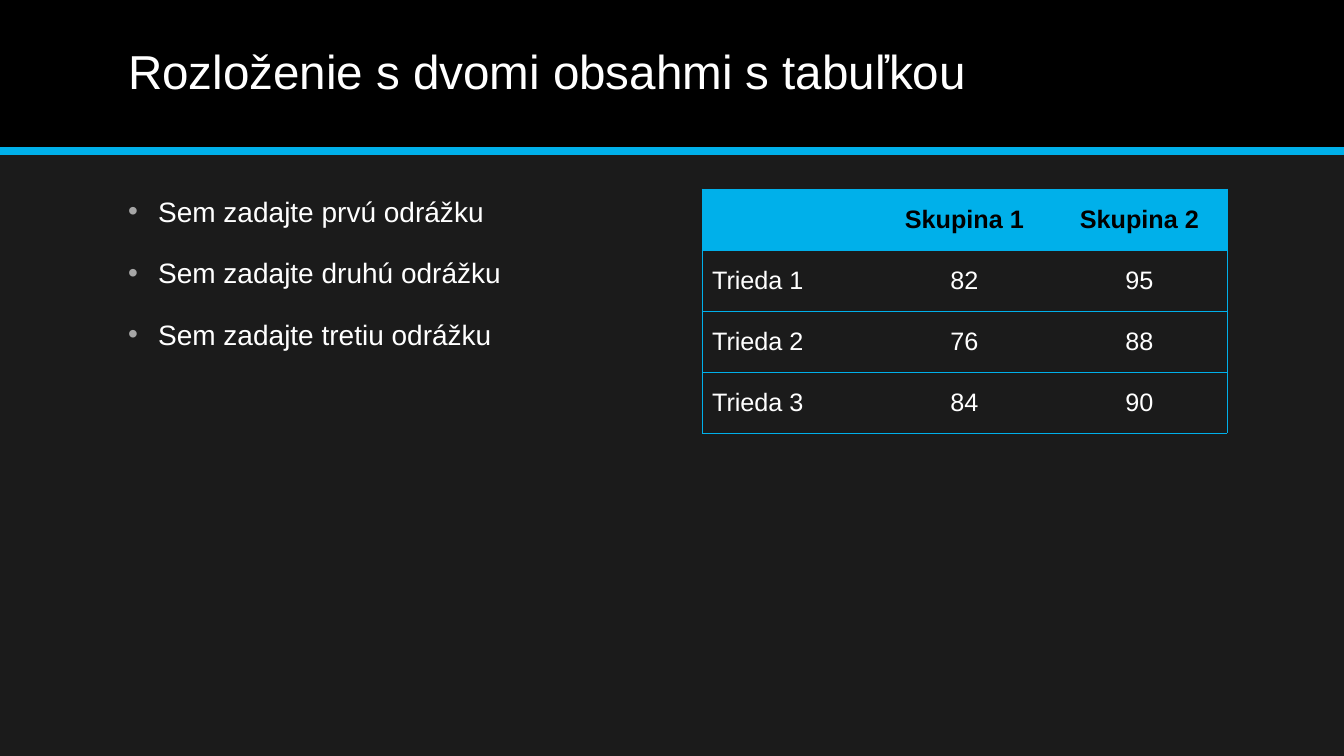
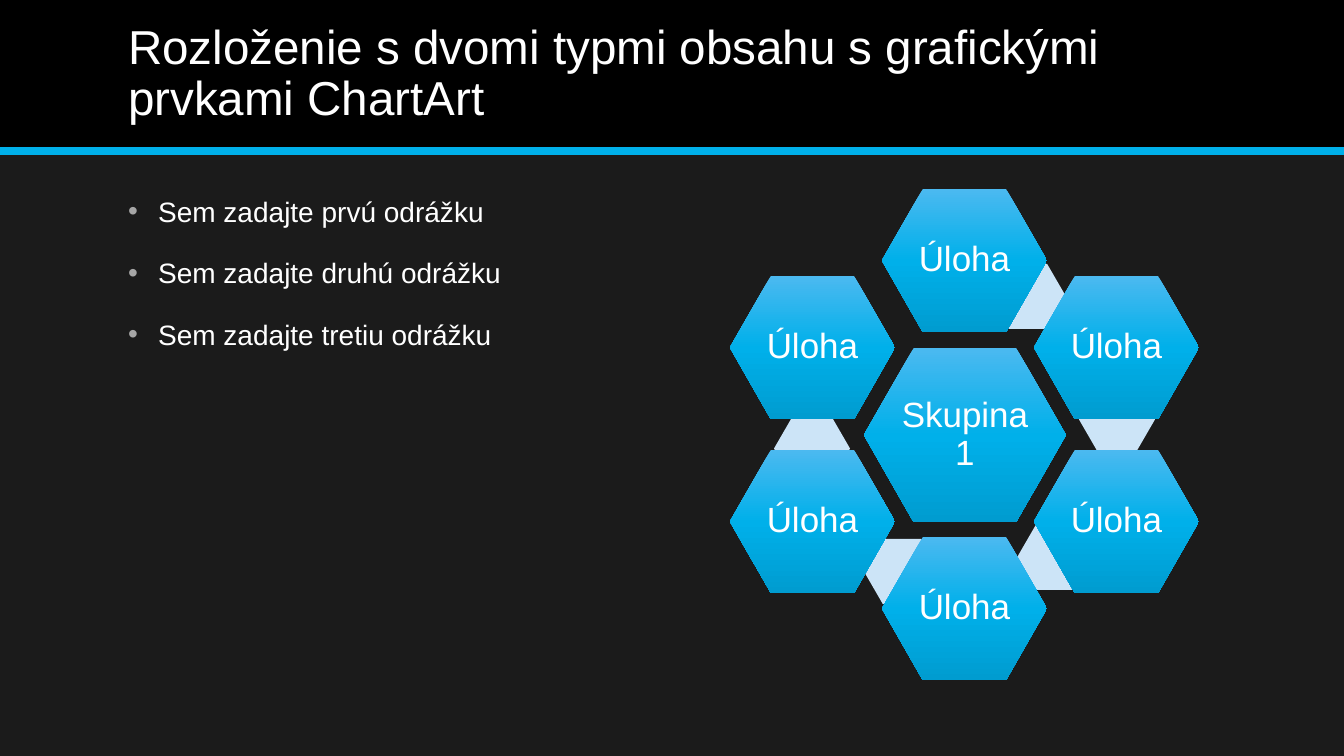
from lxml import etree
from pptx import Presentation
from pptx.dml.color import RGBColor
from pptx.enum.shapes import MSO_CONNECTOR, MSO_SHAPE
from pptx.enum.text import MSO_ANCHOR, MSO_AUTO_SIZE, PP_ALIGN
from pptx.oxml import parse_xml
from pptx.oxml.ns import nsdecls, qn
from pptx.util import Pt

RECTANGLE, HEXAGON = MSO_SHAPE.RECTANGLE, MSO_SHAPE.HEXAGON
STRAIGHT = MSO_CONNECTOR.STRAIGHT
MIDDLE, TOP = MSO_ANCHOR.MIDDLE, MSO_ANCHOR.TOP
LEFT, CENTER = PP_ALIGN.LEFT, PP_ALIGN.CENTER
NO_AUTOFIT = MSO_AUTO_SIZE.NONE

PX = 914400 / 100.8
WIDTH, HEIGHT, BAND_HEIGHT = 1344, 756, 151
FONT = "Arial"
BACKGROUND, BLACK, WHITE = "1B1B1B", "000000", "FFFFFF"
ACCENT, BULLET, PALE = "00B0EA", "A6A6A6", "CCE4F7"
GRADIENT = [(0, "4BB9F0"), (50000, ACCENT), (100000, "009CD0")]


def px(*lengths):
    return [round(length * PX) for length in lengths]


def add_run(paragraph, text, size, color=WHITE, bold=False):
    run = paragraph.add_run()
    run.text = text
    run.font.name = FONT
    run.font.size = Pt(size)
    run.font.bold = bold
    run.font.color.rgb = RGBColor.from_string(color)


presentation = Presentation()
presentation.slide_width, presentation.slide_height = px(WIDTH, HEIGHT)
layout = presentation.slide_layouts[1]

# Shared background and placeholder positions
background = presentation.slide_master.background.fill
background.solid()
background.fore_color.rgb = RGBColor.from_string(BACKGROUND)
PLACES = {0: (118, 14, 1109, 121), 1: (118, 189, 524, 492)}
for placeholder in layout.placeholders:
    index = placeholder.placeholder_format.idx
    if index in PLACES:
        (placeholder.left, placeholder.top,
         placeholder.width, placeholder.height) = px(*PLACES[index])

# Slides with title and bullets
TITLES = ["Rozloženie s dvomi obsahmi s tabuľkou",
          "Rozloženie s dvomi typmi obsahu s grafickými prvkami ChartArt"]
BULLETS = ["Sem zadajte prvú odrážku", "Sem zadajte druhú odrážku",
           "Sem zadajte tretiu odrážku"]
for title in TITLES:
    slide = presentation.slides.add_slide(layout)
    title_frame = slide.shapes.title.text_frame
    title_frame.auto_size = NO_AUTOFIT
    title_frame.vertical_anchor = MIDDLE
    paragraph = title_frame.paragraphs[0]
    paragraph.alignment = LEFT
    paragraph.line_spacing = 0.9
    add_run(paragraph, title, 34)

    body_frame = slide.placeholders[1].text_frame
    body_frame.auto_size = NO_AUTOFIT
    body_frame.vertical_anchor = TOP
    for number, text in enumerate(BULLETS):
        paragraph = body_frame.add_paragraph() if number else body_frame.paragraphs[0]
        paragraph.space_before = Pt(20)
        add_run(paragraph, text, 20)
        properties = paragraph._p.get_or_add_pPr()
        indent = px(30)[0]
        properties.set("marL", str(indent))
        properties.set("indent", str(-indent))
        bullet_color = etree.SubElement(properties, qn("a:buClr"))
        etree.SubElement(bullet_color, qn("a:srgbClr"), val=BULLET)
        etree.SubElement(properties, qn("a:buFont"), typeface=FONT)
        etree.SubElement(properties, qn("a:buChar"), char="•")

table_slide, diagram_slide = presentation.slides

# Header band and accent line, moved to the layout so every slide has them
band = table_slide.shapes.add_shape(RECTANGLE, *px(0, 0, WIDTH, BAND_HEIGHT))
band.shadow.inherit = False
band.fill.solid()
band.fill.fore_color.rgb = RGBColor.from_string(BLACK)
band.line.fill.background()
accent_line = table_slide.shapes.add_connector(
    STRAIGHT, *px(0, BAND_HEIGHT, WIDTH, BAND_HEIGHT))
accent_line.line.color.rgb = RGBColor.from_string(ACCENT)
accent_line.line.width = Pt(6)
etree.SubElement(accent_line._element.spPr, qn("a:effectLst"))
for position, shape in enumerate([band, accent_line], start=2):
    layout.shapes.element.insert(position, shape._element)

# Table with horizontal rules and an outer frame
ROWS = [["", "Skupina 1", "Skupina 2"],
        ["Trieda 1", "82", "95"],
        ["Trieda 2", "76", "88"],
        ["Trieda 3", "84", "90"]]
COLUMN_WIDTH, ROW_HEIGHT = 175, 61
row_count, column_count = len(ROWS), len(ROWS[0])
table = table_slide.shapes.add_table(
    row_count, column_count,
    *px(702, 189, column_count * COLUMN_WIDTH, row_count * ROW_HEIGHT)).table
table.horz_banding = False
for row_index, row in enumerate(ROWS):
    for column_index, text in enumerate(row):
        cell = table.cell(row_index, column_index)
        cell.vertical_anchor = MIDDLE
        is_header = row_index == 0
        if is_header:
            cell.fill.solid()
            cell.fill.fore_color.rgb = RGBColor.from_string(ACCENT)
        else:
            cell.fill.background()
        paragraph = cell.text_frame.paragraphs[0]
        paragraph.alignment = CENTER if column_index else LEFT
        if text:
            add_run(paragraph, text, 18, BLACK if is_header else WHITE, is_header)
        borders = {"L": column_index == 0, "R": column_index == column_count - 1,
                   "T": True, "B": True}
        for position, (side, visible) in enumerate(borders.items()):
            border = etree.Element(qn("a:ln" + side), w=str(Pt(0.5)))
            if visible:
                border_fill = etree.SubElement(border, qn("a:solidFill"))
                etree.SubElement(border_fill, qn("a:srgbClr"), val=ACCENT)
            else:
                etree.SubElement(border, qn("a:noFill"))
            cell._tc.get_or_add_tcPr().insert(position, border)

# Hexagon diagram: left, top, width, height, label (None for a pale link)
TASK_LEFT, TASK_TOP, STEP_X, STEP_Y = 882, 363, 152, 87
TASKS = [  # column and row steps from the centre, place of the link beneath
    (0, -2, (990, 264)),
    (1, -1, (1079, 387)),
    (1, 1, (1017, 525)),
    (0, 2, (864, 539)),
    (-1, 1, (774, 416)),
    (-1, -1, None),
]
hexagons = [(864, 348, 202, 174, "Skupina 1")]
for column, row, link in TASKS:
    if link:
        hexagons.append((*link, 76, 65, None))
    hexagons.append((TASK_LEFT + column * STEP_X, TASK_TOP + row * STEP_Y,
                     165, 143, "Úloha"))

stops = "".join(f'<a:gs pos="{position}"><a:srgbClr val="{color}"/></a:gs>'
                for position, color in GRADIENT)
diagram = diagram_slide.shapes.add_group_shape()
for left, top, width, height, label in hexagons:
    hexagon = diagram.shapes.add_shape(HEXAGON, *px(left, top, width, height))
    hexagon.adjustments[0] = 0.286 if label else 0.289
    hexagon.shadow.inherit = False
    hexagon.line.fill.background()
    hexagon.fill.solid()
    hexagon.fill.fore_color.rgb = RGBColor.from_string(PALE)
    if label:
        solid_fill = hexagon._element.spPr.find(qn("a:solidFill"))
        solid_fill.getparent().replace(solid_fill, parse_xml(
            f'<a:gradFill {nsdecls("a")} rotWithShape="1"><a:gsLst>{stops}</a:gsLst>'
            '<a:lin ang="5400000" scaled="0"/></a:gradFill>'))
        frame = hexagon.text_frame
        frame.word_wrap = True
        frame.vertical_anchor = MIDDLE
        (frame.margin_left, frame.margin_top,
         frame.margin_right, frame.margin_bottom) = px(3, 3, 3, 3)
        paragraph = frame.paragraphs[0]
        paragraph.alignment = CENTER
        paragraph.line_spacing = 0.9
        add_run(paragraph, label, 25)

presentation.save("out.pptx")
